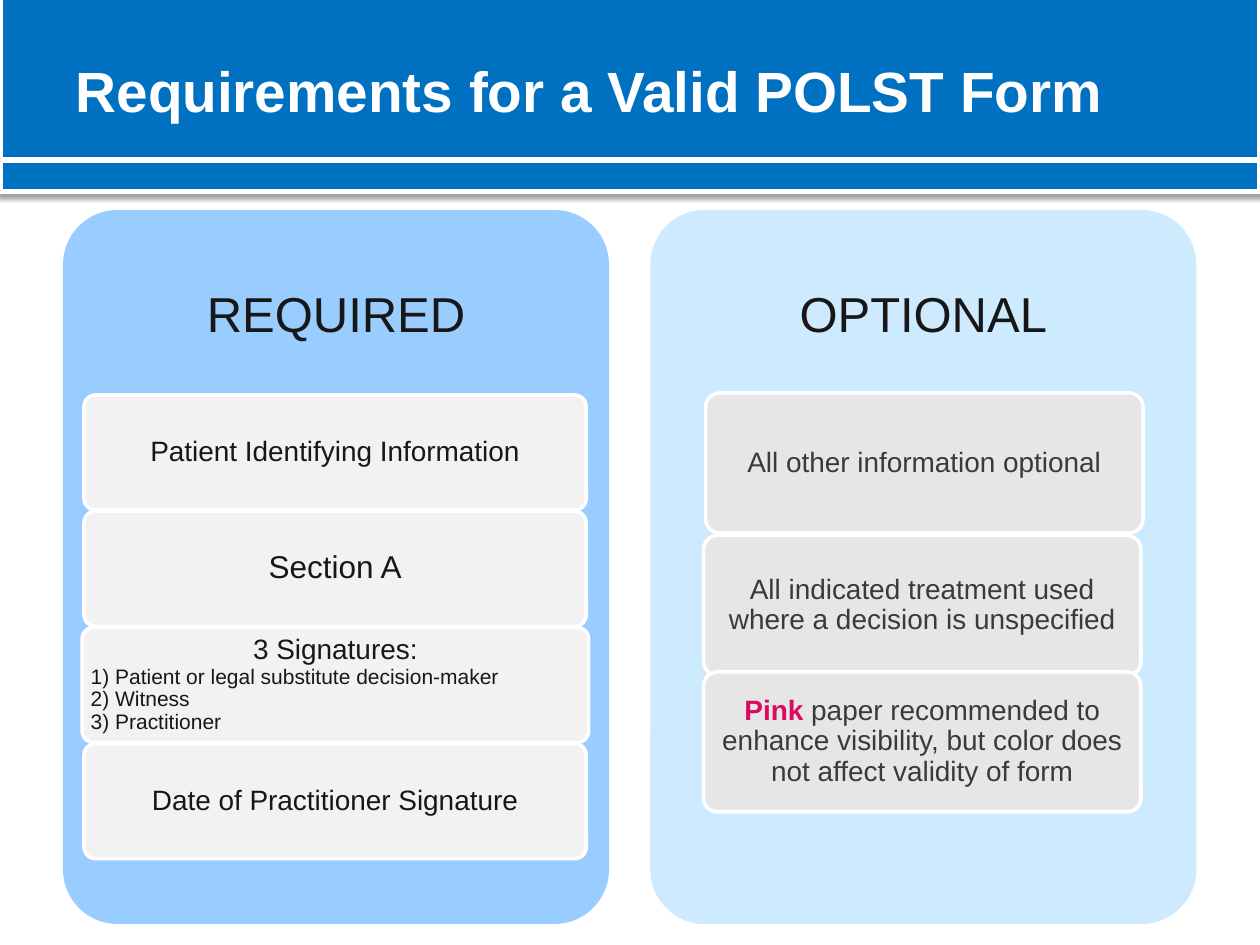
from dataclasses import dataclass

from lxml import etree
from pptx import Presentation
from pptx.dml.color import RGBColor
from pptx.enum.shapes import MSO_SHAPE
from pptx.enum.text import MSO_ANCHOR, MSO_AUTO_SIZE, PP_ALIGN
from pptx.oxml import parse_xml
from pptx.util import Pt

RECT, ROUND = MSO_SHAPE.RECTANGLE, MSO_SHAPE.ROUNDED_RECTANGLE
MIDDLE = MSO_ANCHOR.MIDDLE
LEFT, CENTER = PP_ALIGN.LEFT, PP_ALIGN.CENTER


@dataclass(frozen=True)
class Theme:
    font: str = "Arial"
    band: str = "0070C0"
    white: str = "FFFFFF"
    ink: str = "171717"
    soft_ink: str = "3A3A3A"
    pink: str = "DB0962"
    required: str = "99CCFF"
    optional: str = "CDEAFF"
    required_card: str = "F2F2F2"
    optional_card: str = "E6E6E6"
    title: float = 32.4
    heading: float = 28
    large: float = 18
    body: float = 16
    small: float = 12


T = Theme()
SHADOW = (
    '<a:effectLst xmlns:a="http://schemas.openxmlformats.org/drawingml/2006/main">'
    '<a:outerShdw blurRad="39370" dist="20320" dir="5400000" rotWithShape="0">'
    '<a:srgbClr val="000000"><a:alpha val="38000"/></a:srgbClr>'
    '</a:outerShdw></a:effectLst>'
)


def add_box(kind, x, y, w, h, fill, line=0):
    sp = s.shapes.add_shape(kind, Pt(x), Pt(y), Pt(w), Pt(h))
    sp.shadow.inherit = False
    sp.fill.solid()
    sp.fill.fore_color.rgb = RGBColor.from_string(fill)
    if line:
        sp.line.color.rgb = RGBColor.from_string(T.white)
        sp.line.width = Pt(line)
    else:
        sp.line.fill.background()
    if kind == ROUND:
        sp.adjustments[0] = 0.1
    return sp


def write(sp, paragraphs, color, inset):
    """Each paragraph is (text, size, alignment); **bold** text is pink."""
    tf = sp.text_frame
    tf.word_wrap = True
    tf.vertical_anchor = MIDDLE
    tf.margin_left = tf.margin_right = Pt(inset)
    tf.margin_top = tf.margin_bottom = Pt(inset * 0.75)
    for i, (text, size, align) in enumerate(paragraphs):
        p = tf.add_paragraph() if i else tf.paragraphs[0]
        p.alignment = align
        p.line_spacing = 0.9
        p.font.name = T.font
        p.font.size = Pt(size)
        p.font.color.rgb = RGBColor.from_string(color)
        if "**" not in text:
            p.text = text
            continue
        for j, part in enumerate(text.split("**")):
            if part:
                r = p.add_run()
                r.text = part
                if j % 2:
                    r.font.bold = True
                    r.font.color.rgb = RGBColor.from_string(T.pink)


prs = Presentation()
prs.slide_width, prs.slide_height = Pt(720), Pt(540)
s = prs.slides.add_slide(prs.slide_layouts[5])
title = s.shapes.title

# Header bands, placed behind the title
for y, h in ((-3.6, 95), (91.4, 18)):
    sp = add_box(RECT, 0, y, 720, h, T.band, line=3)
    props = sp._element.spPr
    props.replace(props.find("{*}effectLst"), parse_xml(SHADOW))
    title._element.addprevious(sp._element)

# Title
title.left, title.top, title.width, title.height = Pt(36), Pt(6.5), Pt(648), Pt(90)
tf = title.text_frame
tf.auto_size = MSO_AUTO_SIZE.NONE
tf.vertical_anchor = MIDDLE
p = tf.paragraphs[0]
p.text = "Requirements for a Valid POLST Form"
p.alignment = LEFT
p.font.name = T.font
p.font.size = Pt(T.title)
p.font.bold = True
p.font.color.rgb = RGBColor.from_string(T.white)

# Cards: left, top, width, paragraphs
LIST = "1) Patient or legal substitute decision-maker\n2) Witness\n3) Practitioner"
required = [
    (48, 287, [("Patient Identifying Information", T.body, CENTER)]),
    (48, 287, [("Section A", T.large, CENTER)]),
    (46.9, 289.5, [("3 Signatures:", T.body, CENTER), (LIST, T.small, LEFT)]),
    (48, 287, [("Date of Practitioner Signature", T.body, CENTER)]),
]
required = [(x, 225.7 + 66.4 * i, w, text) for i, (x, w, text) in enumerate(required)]
optional = [
    (403.2, 224.6, 250, [("All other information optional", T.body, CENTER)]),
    (402, 306, 250, [("All indicated treatment used where a decision is unspecified",
                      T.body, CENTER)]),
    (402, 384, 250, [("**Pink** paper recommended to enhance visibility, "
                      "but color does not affect validity of form", T.body, CENTER)]),
]

# Panels with their headings and cards
panels = [
    ("REQUIRED", 36, T.required, T.required_card, T.ink, 65.8, required),
    ("OPTIONAL", 371.6, T.optional, T.optional_card, T.soft_ink, 80, optional),
]
for heading, left, fill, card_fill, color, card_h, cards in panels:
    add_box(ROUND, left, 120, 312, 408, fill)
    head = s.shapes.add_textbox(Pt(left), Pt(120), Pt(312), Pt(122.4))
    write(head, [(heading, T.heading, CENTER)], T.ink, 8.4)
    for x, y, w, paragraphs in cards:
        write(add_box(ROUND, x, y, w, card_h, card_fill, line=2), paragraphs, color, 3)

prs.save("out.pptx")
